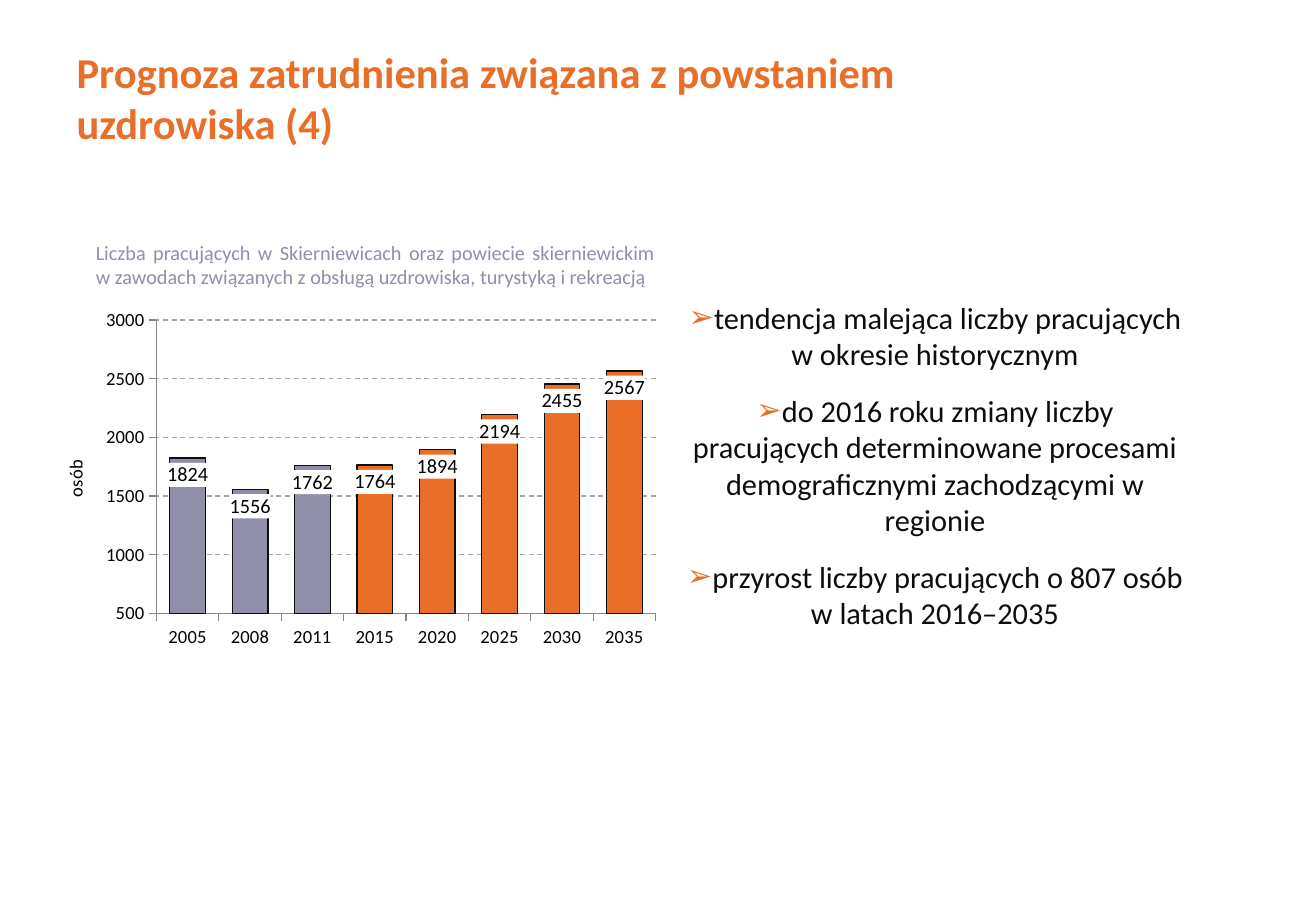
from lxml import etree
from pptx import Presentation
from pptx.chart.data import CategoryChartData
from pptx.dml.color import RGBColor
from pptx.enum.chart import XL_CHART_TYPE, XL_LABEL_POSITION, XL_TICK_MARK
from pptx.enum.dml import MSO_LINE
from pptx.enum.text import MSO_ANCHOR, MSO_AUTO_SIZE, PP_ALIGN
from pptx.oxml import parse_xml
from pptx.oxml.ns import nsdecls, qn
from pptx.util import Inches, Pt

COLUMNS = XL_CHART_TYPE.COLUMN_CLUSTERED
INSIDE_END = XL_LABEL_POSITION.INSIDE_END
TICK_OUTSIDE, TICK_NONE = XL_TICK_MARK.OUTSIDE, XL_TICK_MARK.NONE
DASH = MSO_LINE.DASH
TOP, MIDDLE = MSO_ANCHOR.TOP, MSO_ANCHOR.MIDDLE
NO_FIT = MSO_AUTO_SIZE.NONE
LEFT, CENTER, JUSTIFY = PP_ALIGN.LEFT, PP_ALIGN.CENTER, PP_ALIGN.JUSTIFY

ORANGE = RGBColor(0xE9, 0x6F, 0x28)
VIOLET = RGBColor(0x8F, 0x8F, 0xAA)
INK = RGBColor(0x0D, 0x0D, 0x0D)
BLACK = RGBColor(0, 0, 0)
GRID_GREY = RGBColor(0xA6, 0xA6, 0xA6)
AXIS_GREY = RGBColor(0x86, 0x86, 0x86)
FONT = "Calibri"

TITLE = "Prognoza zatrudnienia związana z powstaniem\vuzdrowiska (4)"
CAPTION = ("Liczba pracujących w Skierniewicach oraz powiecie skierniewickim "
           "w zawodach związanych z obsługą uzdrowiska, turystyką i rekreacją")
FINDINGS = [
    "tendencja malejąca liczby pracujących w okresie historycznym",
    "do 2016 roku zmiany liczby pracujących determinowane procesami "
    "demograficznymi zachodzącymi w regionie",
    "przyrost liczby pracujących o 807 osób w latach 2016–2035",
]
EMPLOYMENT = {"2005": 1824, "2008": 1556, "2011": 1762, "2015": 1764,
              "2020": 1894, "2025": 2194, "2030": 2455, "2035": 2567}
FIRST_FORECAST = "2015"
PLOT_AREA = {"x": 0.19, "y": 0.05, "w": 0.79, "h": 0.83}


def apply(target, **values):
    """Set every given attribute on the target."""
    for name, value in values.items():
        setattr(target, name, value)


def style_font(font, size, color, bold=False):
    """Give a font the slide's typeface, a size and a colour."""
    apply(font, name=FONT, size=Pt(size), bold=bold)
    font.color.rgb = color


def style_line(line, color):
    """Give a line a colour and the common width."""
    line.color.rgb = color
    line.width = Pt(0.75)


def place(shape, box):
    """Move a shape to a box given in inches."""
    apply(shape, **dict(zip(("left", "top", "width", "height"), map(Inches, box))))


def add_title(slide, box):
    """Fill the title placeholder."""
    title = slide.shapes.title
    place(title, box)
    frame = title.text_frame
    frame.text = TITLE
    apply(frame, vertical_anchor=MIDDLE, auto_size=NO_FIT, word_wrap=True)
    heading = frame.paragraphs[0]
    heading.alignment = LEFT
    for run in heading.runs:
        style_font(run.font, 25.2, ORANGE, True)


def add_caption(slide, box):
    """Write the chart's caption."""
    frame = slide.shapes.add_textbox(*map(Inches, box)).text_frame
    frame.word_wrap = True
    frame.text = CAPTION
    caption = frame.paragraphs[0]
    caption.alignment = JUSTIFY
    style_font(caption.runs[0].font, 12, VIOLET)


def add_findings(slide, box):
    """Fill the body placeholder with the bulleted findings."""
    body = slide.placeholders[1]
    place(body, box)
    frame = body.text_frame
    apply(frame, vertical_anchor=TOP, auto_size=NO_FIT, word_wrap=True)
    frame.text = "\n".join(FINDINGS)
    for finding in frame.paragraphs:
        properties = finding._p.get_or_add_pPr()
        for name in ("marL", "indent"):
            properties.set(name, "0")
        bullet_color = etree.SubElement(properties, qn("a:buClr"))
        etree.SubElement(bullet_color, qn("a:srgbClr"), val=str(ORANGE))
        etree.SubElement(properties, qn("a:buChar"), char="➢")
        last = finding.text == FINDINGS[-1]
        apply(finding, alignment=CENTER, space_before=Pt(0),
              space_after=Pt(0 if last else 12))
        style_font(finding.runs[0].font, 18, INK)


def style_axes(chart):
    """Format both axes, the gridlines and the value axis title."""
    for axis in (chart.category_axis, chart.value_axis):
        apply(axis, major_tick_mark=TICK_OUTSIDE, minor_tick_mark=TICK_NONE)
        style_font(axis.tick_labels.font, 11, BLACK)
        style_line(axis.format.line, AXIS_GREY)
    persons = chart.value_axis
    apply(persons, minimum_scale=500, maximum_scale=3000, major_unit=500,
          has_major_gridlines=True)
    apply(persons.tick_labels, number_format="0", number_format_is_linked=False)
    gridline = persons.major_gridlines.format.line
    style_line(gridline, GRID_GREY)
    gridline.dash_style = DASH
    heading = persons.axis_title.text_frame
    heading.text = "osób"
    style_font(heading.paragraphs[0].runs[0].font, 11, BLACK)


def style_columns(plot):
    """Colour history and forecast columns and label them on white."""
    apply(plot, gap_width=75, vary_by_categories=False)
    employed = plot.series[0]
    forecast_start = list(EMPLOYMENT).index(FIRST_FORECAST)
    for index in range(len(EMPLOYMENT)):
        column = employed.points[index].format
        column.fill.solid()
        column.fill.fore_color.rgb = VIOLET if index < forecast_start else ORANGE
        style_line(column.line, INK)
    labels = employed.data_labels
    apply(labels, show_value=True, position=INSIDE_END, number_format="0",
          number_format_is_linked=False)
    style_font(labels.font, 12, BLACK)
    labels._element.find(qn("c:txPr")).addprevious(parse_xml(
        f'<c:spPr {nsdecls("c", "a")}><a:solidFill><a:srgbClr val="FFFFFF"/>'
        '</a:solidFill></c:spPr>'))


def fix_plot_area(chart):
    """Pin the inner plot area to its share of the chart."""
    plot_area = chart._chartSpace.chart.plotArea
    for layout in plot_area.findall(qn("c:layout")):
        plot_area.remove(layout)
    layout = etree.Element(qn("c:layout"))
    manual = etree.SubElement(layout, qn("c:manualLayout"))
    settings = {"layoutTarget": "inner", "xMode": "edge", "yMode": "edge", **PLOT_AREA}
    for name, value in settings.items():
        etree.SubElement(manual, qn(f"c:{name}"), val=str(value))
    plot_area.insert(0, layout)


def add_employment_chart(slide, box):
    """Draw the employment columns."""
    data = CategoryChartData(number_format="0")
    data.categories = list(EMPLOYMENT)
    data.add_series("Liczba pracujących", EMPLOYMENT.values())
    chart = slide.shapes.add_chart(COLUMNS, *map(Inches, box), data).chart
    apply(chart, has_title=False, has_legend=False)
    style_font(chart.font, 10, BLACK)
    style_axes(chart)
    style_columns(chart.plots[0])
    fix_plot_area(chart)


def main():
    """Build and save the slide."""
    deck = Presentation()
    apply(deck, slide_width=Inches(10.83), slide_height=Inches(7.5))
    slide = deck.slides.add_slide(deck.slide_layouts[1])
    add_title(slide, (0.53, 0.36, 9.75, 0.87))
    add_employment_chart(slide, (0.3, 2.49, 5.2, 2.91))
    add_caption(slide, (0.69, 1.93, 4.8, 0.5))
    add_findings(slide, (5.5, 2.41, 4.39, 3.77))
    deck.save("out.pptx")


if __name__ == "__main__":
    main()
